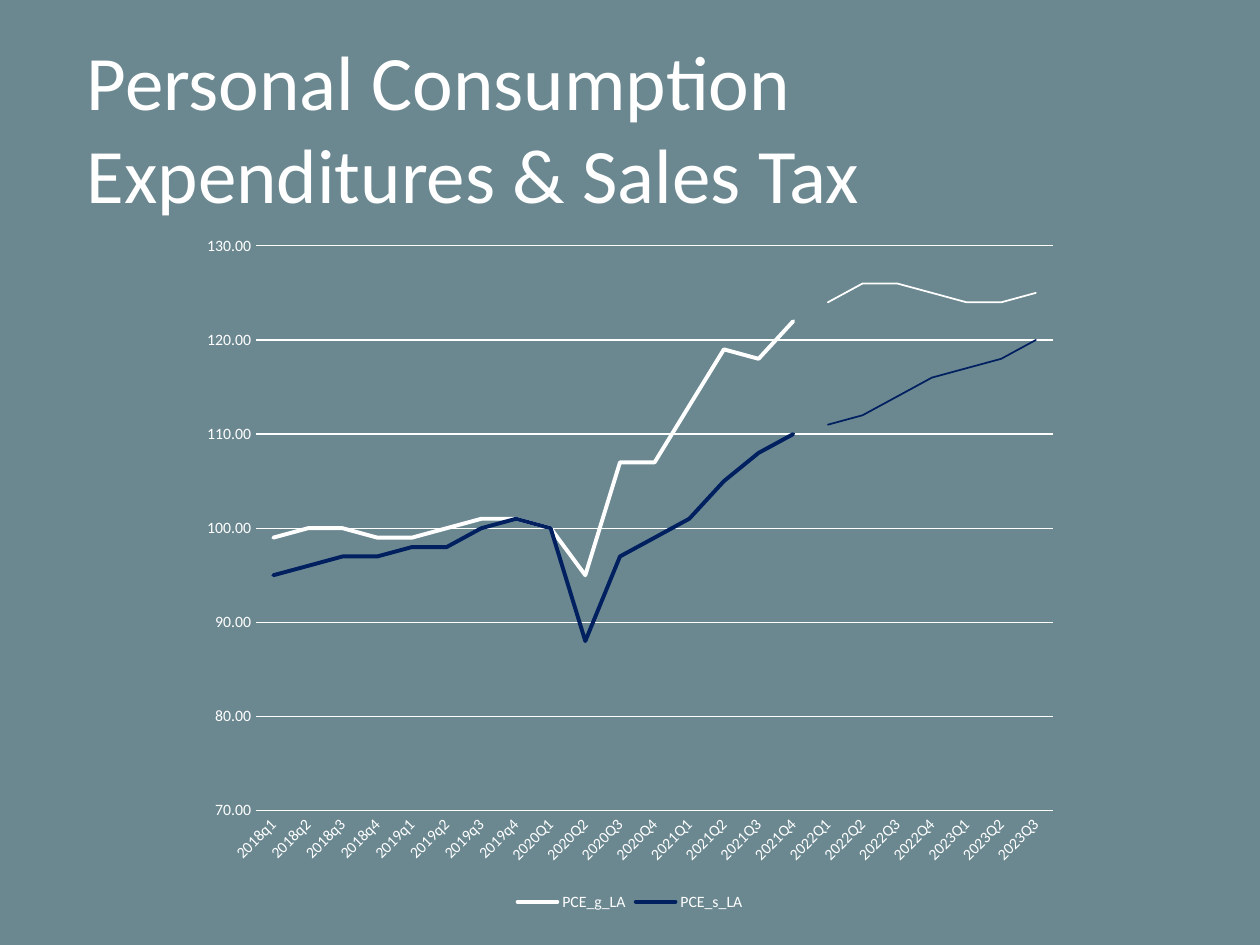
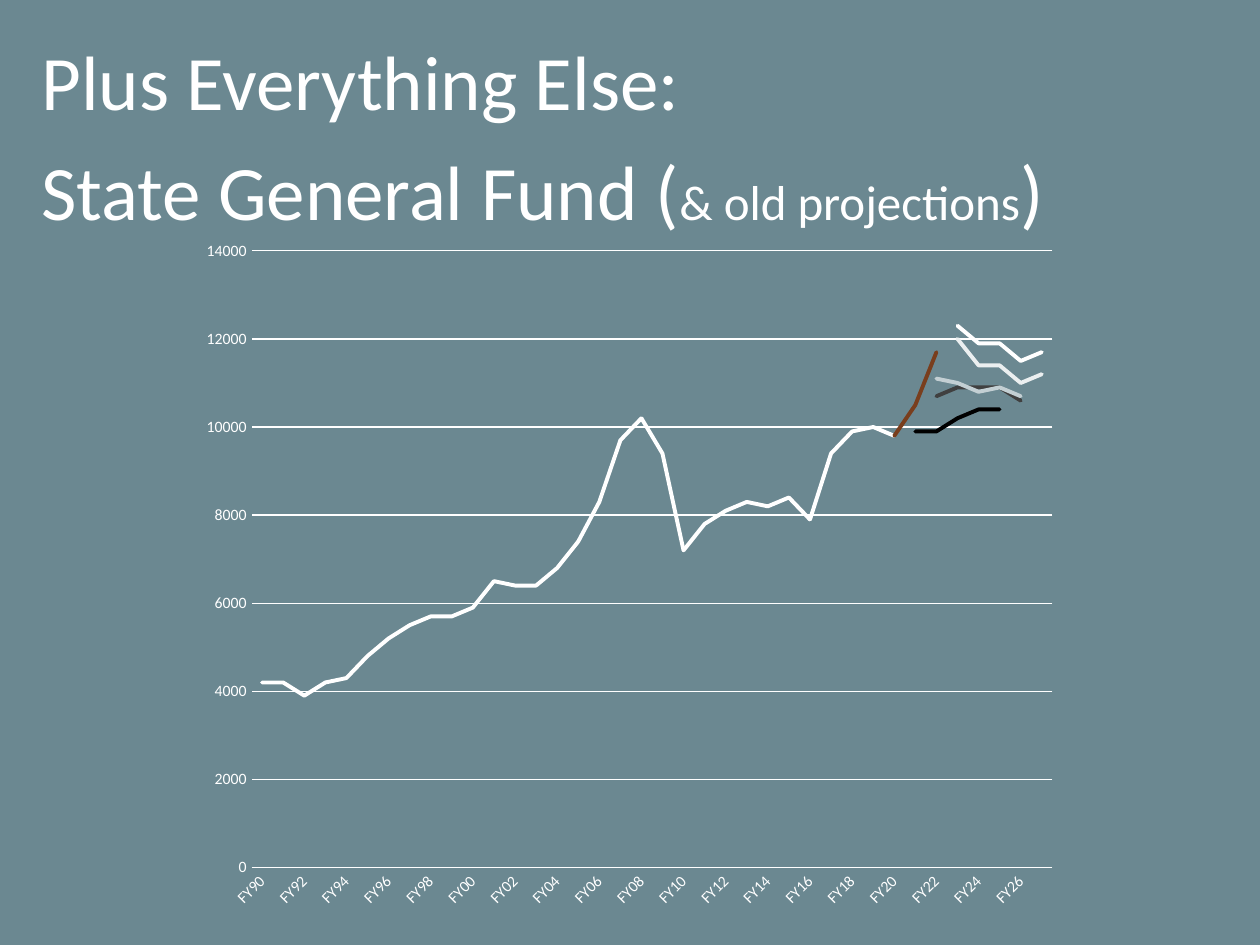
import pptx
import pptx.chart.data
import pptx.dml.color
import pptx.enum.chart
import pptx.oxml
import pptx.oxml.ns
import pptx.util
from pptx.util import Inches

BACKGROUND = pptx.dml.color.RGBColor(0x6B, 0x88, 0x91)
WHITE = pptx.dml.color.RGBColor(0xFF, 0xFF, 0xFF)
NAVY = pptx.dml.color.RGBColor(0x00, 0x20, 0x60)
CHARCOAL = pptx.dml.color.RGBColor(0x40, 0x40, 0x40)
BLACK = pptx.dml.color.RGBColor(0x00, 0x00, 0x00)
PALE_BLUE = pptx.dml.color.RGBColor(0xC3, 0xCF, 0xD3)
BROWN = pptx.dml.color.RGBColor(0x79, 0x3E, 0x1D)
OFF_WHITE = pptx.dml.color.RGBColor(0xEB, 0xEF, 0xF0)

QUARTERS = [f"{year}{'q' if year < 2020 else 'Q'}{quarter}"
            for year in range(2018, 2024) for quarter in range(1, 5)][:-1]
FISCAL_YEARS = [f"FY{year % 100:02d}" for year in range(1990, 2028)]

CONSUMPTION = [
    ("PCE_g_LA", "2018q1", WHITE, 2.25,
     [99, 100, 100, 99, 99, 100, 101, 101, 100, 95, 107, 107, 113, 119, 118, 122]),
    ("PCE_s_LA", "2018q1", NAVY, 2.25,
     [95, 96, 97, 97, 98, 98, 100, 101, 100, 88, 97, 99, 101, 105, 108, 110]),
    ("Series 3", "2022Q1", WHITE, 1, [124, 126, 126, 125, 124, 124, 125]),
    ("Series 4", "2022Q1", NAVY, 1, [111, 112, 114, 116, 117, 118, 120]),
]

FUND_RUNS = [
    ("FY90", WHITE, [4200, 4200, 3900, 4200, 4300, 4800, 5200, 5500, 5700, 5700,
                     5900, 6500, 6400, 6400, 6800, 7400]),
    ("FY05", WHITE, [7400, 8300, 9700, 10200]),
    ("FY08", WHITE, [10200, 9400, 7200]),
    ("FY10", WHITE, [7200, 7800, 8100, 8300, 8200, 8400, 7900]),
    ("FY16", WHITE, [7900, 9400, 9900, 10000, 9800]),
    ("FY22", CHARCOAL, [10700, 10900, 10900, 10900, 10600]),
    ("FY21", BLACK, [9900, 9900, 10200, 10400, 10400]),
    ("FY22", PALE_BLUE, [11100, 11000, 10800, 10900, 10700]),
    ("FY20", BROWN, [9800, 10500, 11700]),
    ("FY23", OFF_WHITE, [12000, 11400, 11400, 11000, 11200]),
    ("FY23", WHITE, [12300, 11900, 11900, 11500, 11700]),
]
GENERAL_FUND = [(f"Series {number}", start, color, 2.25, values)
                for number, (start, color, values) in enumerate(FUND_RUNS, 1)]


def chart_xml(tag, content):
    return pptx.oxml.parse_xml(
        f"<c:{tag} {pptx.oxml.ns.nsdecls('c')}>{content}</c:{tag}>")


class Deck:
    font = "Calibri"
    title_size = 44
    label_size = 9

    def __init__(self):
        self.presentation = pptx.Presentation()
        self.presentation.slide_width = Inches(10)
        self.presentation.slide_height = Inches(7.5)
        self.slide = None

    def add_slide(self):
        self.slide = self.presentation.slides.add_slide(self.presentation.slide_layouts[6])
        self.slide.background.fill.solid()
        self.slide.background.fill.fore_color.rgb = BACKGROUND

    def style_font(self, font, size):
        font.name = self.font
        font.size = pptx.util.Pt(size)
        font.color.rgb = WHITE

    def style_line(self, line, color=WHITE, width=0.75):
        line.color.rgb = color
        line.width = pptx.util.Pt(width)

    def add_title(self, left, width, height, lines):
        frame = self.slide.shapes.add_textbox(
            Inches(left), Inches(0.22), Inches(width), Inches(height)).text_frame
        frame.word_wrap = True
        for index, pieces in enumerate(lines):
            paragraph = frame.add_paragraph() if index else frame.paragraphs[0]
            if index:
                paragraph.space_before = pptx.util.Pt(10)
            for text, size in pieces:
                run = paragraph.add_run()
                run.text = text
                self.style_font(run.font, size)

    def add_line_chart(self, top, categories, lines, scale, plot_box,
                       number_format="General", label_skip=1):
        data = pptx.chart.data.CategoryChartData()
        data.categories = categories
        for name, start, _, _, values in lines:
            before = categories.index(start)
            after = len(categories) - before - len(values)
            data.add_series(name, [None] * before + values + [None] * after)
        chart = self.slide.shapes.add_chart(
            pptx.enum.chart.XL_CHART_TYPE.LINE,
            Inches(1.5), Inches(top), Inches(7), Inches(5.5), data).chart
        chart.has_title = False
        chart.has_legend = False
        self.style_font(chart.font, 10)
        chart.plots[0].vary_by_categories = False
        for series, (_, _, color, width, _) in zip(chart.plots[0].series, lines):
            series.smooth = False
            series.marker.style = pptx.enum.chart.XL_MARKER_STYLE.NONE
            self.style_line(series.format.line, color, width)
            series._element.xpath("c:spPr/a:ln")[0].set("cap", "rnd")
        self.style_axes(chart, scale, number_format, label_skip)
        self.place_plot(chart, plot_box)
        return chart

    def style_axes(self, chart, scale, number_format, label_skip):
        for axis in (chart.category_axis, chart.value_axis):
            axis.major_tick_mark = pptx.enum.chart.XL_TICK_MARK.NONE
            axis.minor_tick_mark = pptx.enum.chart.XL_TICK_MARK.NONE
            self.style_font(axis.tick_labels.font, self.label_size)
        time_axis, value_axis = chart.category_axis, chart.value_axis
        self.style_line(time_axis.format.line)
        time_axis._element.xpath("c:txPr/a:bodyPr")[0].set("rot", "-2700000")
        skip = chart_xml("tickLblSkip", "")
        skip.set("val", str(label_skip))
        time_axis._element.xpath("c:noMultiLvlLbl")[0].addprevious(skip)
        value_axis.minimum_scale, value_axis.maximum_scale, value_axis.major_unit = scale
        value_axis.tick_labels.number_format = number_format
        value_axis.tick_labels.number_format_is_linked = False
        value_axis.format.line.fill.background()
        value_axis.has_major_gridlines = True
        self.style_line(value_axis.major_gridlines.format.line)

    def place_plot(self, chart, plot_box):
        plot_area = chart._chartSpace.xpath("c:chart/c:plotArea")[0]
        for layout in plot_area.xpath("c:layout"):
            plot_area.remove(layout)
        sides = "".join(f'<c:{side} val="{share}"/>' for side, share in zip("xywh", plot_box))
        plot_area.insert(0, chart_xml(
            "layout",
            '<c:manualLayout><c:layoutTarget val="inner"/><c:xMode val="edge"/>'
            f'<c:yMode val="edge"/>{sides}</c:manualLayout>'))

    def add_legend(self, chart, hidden):
        chart.has_legend = True
        legend = chart.legend
        legend.position = pptx.enum.chart.XL_LEGEND_POSITION.BOTTOM
        legend.include_in_layout = False
        self.style_font(legend.font, self.label_size)
        position = legend._element.xpath("c:legendPos")[0]
        for index in reversed(hidden):
            position.addnext(chart_xml(
                "legendEntry", f'<c:idx val="{index}"/><c:delete val="1"/>'))


def main():
    deck = Deck()
    size = deck.title_size

    deck.add_slide()
    deck.add_title(0.59, 8.82, 0.93,
                   [[("Personal Consumption Expenditures & Sales Tax", size)]])
    consumption_chart = deck.add_line_chart(
        1.77, QUARTERS, CONSUMPTION, (70, 130, 10), (0.076, 0.033, 0.904, 0.815),
        number_format="0.00")
    deck.add_legend(consumption_chart, hidden=[2, 3])

    deck.add_slide()
    deck.add_title(0.23, 9.77, 1.53,
                   [[("Plus Everything Else:", size)],
                    [("State General Fund (", size), ("& old projections", 28), (")", size)]])
    deck.add_line_chart(
        1.81, FISCAL_YEARS, GENERAL_FUND, (0, 14000, 2000), (0.071, 0.033, 0.908, 0.89),
        label_skip=2)

    deck.presentation.save("out.pptx")


if __name__ == "__main__":
    main()
